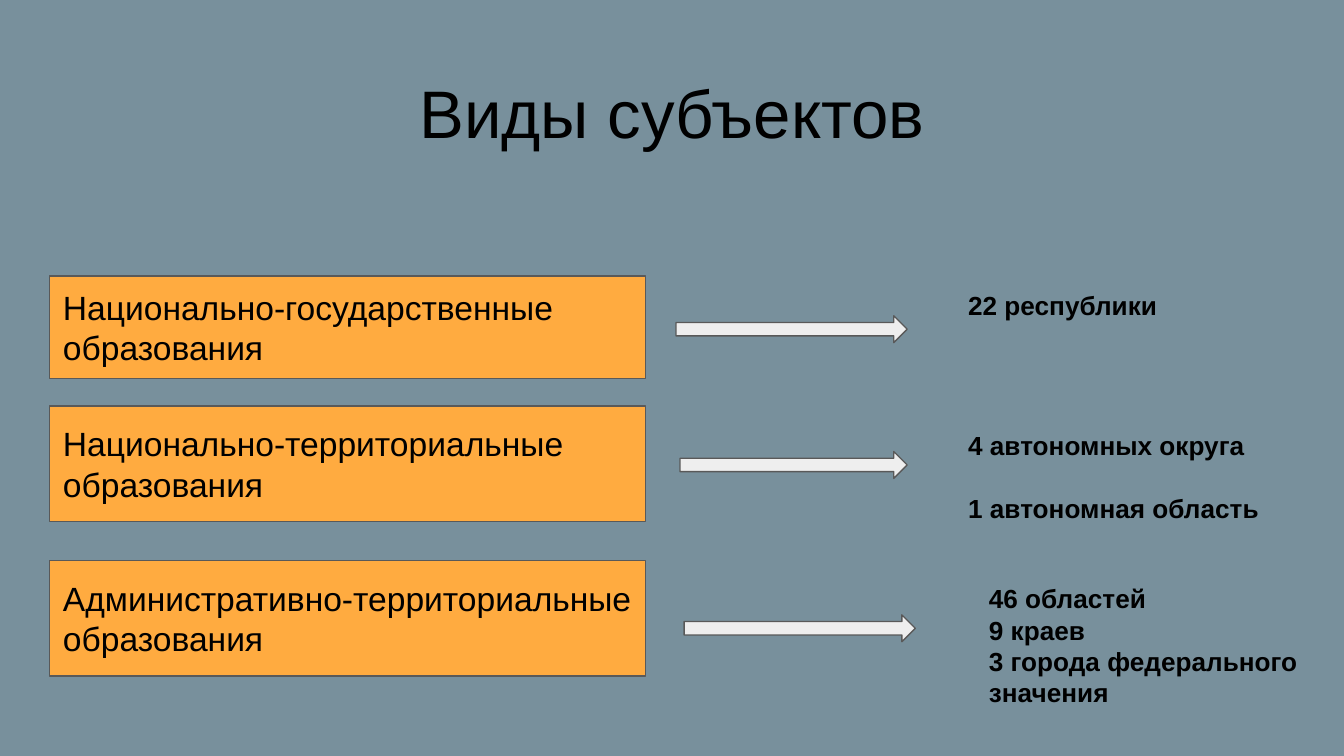
from dataclasses import dataclass
from typing import NamedTuple

from pptx import Presentation
from pptx.dml.color import RGBColor
from pptx.enum.shapes import MSO_SHAPE
from pptx.enum.text import MSO_ANCHOR, PP_ALIGN
from pptx.shapes.autoshape import Shape
from pptx.slide import Slide
from pptx.util import Emu, Pt

EMU_PER_PX = 4572


@dataclass(frozen=True)
class Theme:
    font: str = "Arial"
    background: RGBColor = RGBColor(0x78, 0x90, 0x9C)
    category: RGBColor = RGBColor(0xFF, 0xAB, 0x40)
    arrow: RGBColor = RGBColor(0xEE, 0xEE, 0xEE)
    outline: RGBColor = RGBColor(0x59, 0x59, 0x59)
    text: RGBColor = RGBColor(0, 0, 0)
    title_size: int = 36
    category_size: int = 18
    detail_size: int = 14
    outline_width: float = 0.75


class Box(NamedTuple):
    left: int
    top: int
    width: int
    height: int

    def emu(self) -> list[Emu]:
        return [Emu(length * EMU_PER_PX) for length in self]


@dataclass(frozen=True)
class SubjectKind:
    category: str
    category_box: Box
    arrow_box: Box
    details: tuple[str, ...]
    details_box: Box
    detail_gap: int = 0


THEME = Theme()
SLIDE_WIDTH = 2000
SLIDE_HEIGHT = 1125
INSET = 20
TITLE_BOX = Box(68, 74, 1864, 184)
SUBJECT_KINDS = [
    SubjectKind(
        "Национально-государственные образования",
        Box(74, 411, 887, 152),
        Box(1006, 470, 344, 40),
        ("22 республики",),
        Box(1421, 411, 528, 152),
    ),
    SubjectKind(
        "Национально-территориальные образования",
        Box(74, 604, 887, 172),
        Box(1012, 672, 338, 40),
        ("4 автономных округа", "1 автономная область"),
        Box(1421, 619, 504, 172),
        detail_gap=17,
    ),
    SubjectKind(
        "Административно-территориальные образования",
        Box(74, 834, 887, 172),
        Box(1018, 915, 344, 40),
        ("46 областей", "9 краев", "3 города федерального значения"),
        Box(1452, 847, 528, 236),
    ),
]


def write(
    holder: Shape,
    lines: tuple[str, ...],
    size: int,
    bold: bool = False,
    align: PP_ALIGN = PP_ALIGN.LEFT,
    anchor: MSO_ANCHOR = MSO_ANCHOR.MIDDLE,
    gap: int = 0,
) -> None:
    frame = holder.text_frame
    frame.text = "\n".join(lines)
    frame.word_wrap = True
    frame.vertical_anchor = anchor
    inset = Emu(INSET * EMU_PER_PX)
    frame.margin_left = frame.margin_right = inset
    frame.margin_top = frame.margin_bottom = inset
    for index, paragraph in enumerate(frame.paragraphs):
        paragraph.alignment = align
        paragraph.space_before = Pt(gap if index else 0)
        for run in paragraph.runs:
            run.font.name = THEME.font
            run.font.size = Pt(size)
            run.font.bold = bold
            run.font.color.rgb = THEME.text


def add_outlined(slide: Slide, preset: MSO_SHAPE, box: Box, fill: RGBColor) -> Shape:
    outlined = slide.shapes.add_shape(preset, *box.emu())
    outlined.shadow.inherit = False
    outlined.fill.solid()
    outlined.fill.fore_color.rgb = fill
    outlined.line.color.rgb = THEME.outline
    outlined.line.width = Pt(THEME.outline_width)
    return outlined


def add_subject_kind(slide: Slide, kind: SubjectKind) -> None:
    category = add_outlined(slide, MSO_SHAPE.RECTANGLE, kind.category_box, THEME.category)
    write(category, (kind.category,), THEME.category_size)
    add_outlined(slide, MSO_SHAPE.RIGHT_ARROW, kind.arrow_box, THEME.arrow)
    details = slide.shapes.add_textbox(*kind.details_box.emu())
    write(
        details,
        kind.details,
        THEME.detail_size,
        bold=True,
        anchor=MSO_ANCHOR.TOP,
        gap=kind.detail_gap,
    )


def main() -> None:
    presentation = Presentation()
    presentation.slide_width = Emu(SLIDE_WIDTH * EMU_PER_PX)
    presentation.slide_height = Emu(SLIDE_HEIGHT * EMU_PER_PX)
    slide = presentation.slides.add_slide(presentation.slide_layouts[6])
    slide.background.fill.solid()
    slide.background.fill.fore_color.rgb = THEME.background
    title = slide.shapes.add_textbox(*TITLE_BOX.emu())
    write(title, ("Виды субъектов",), THEME.title_size, align=PP_ALIGN.CENTER)
    for kind in SUBJECT_KINDS:
        add_subject_kind(slide, kind)
    presentation.save("out.pptx")


if __name__ == "__main__":
    main()
